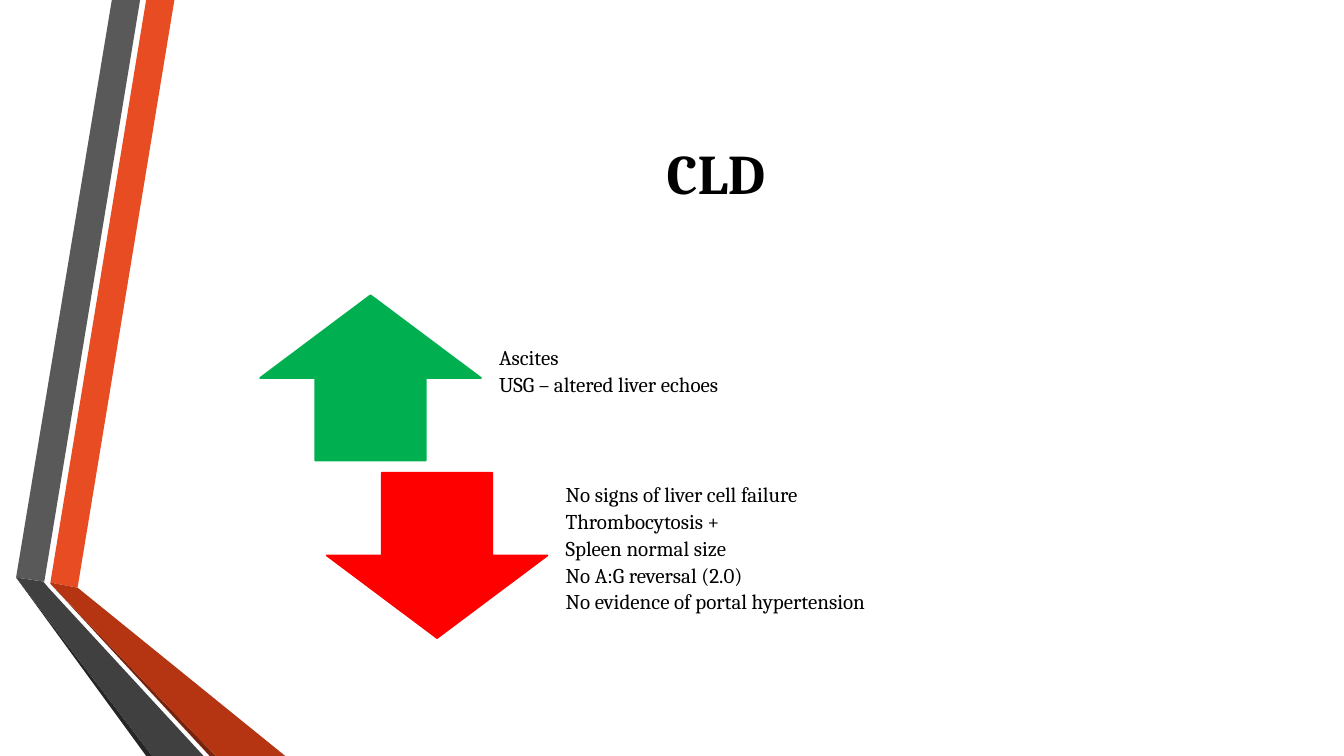
import pptx
import pptx.util
import pptx.dml.color
import pptx.enum.shapes
import pptx.enum.text

Inches = pptx.util.Inches
Pt = pptx.util.Pt
RGBColor = pptx.dml.color.RGBColor
ARROW = pptx.enum.shapes.MSO_SHAPE
ALIGN = pptx.enum.text.PP_ALIGN

BLACK = RGBColor(0x00, 0x00, 0x00)
GREEN = RGBColor(0x00, 0xB0, 0x50)
RED = RGBColor(0xFF, 0x00, 0x00)
ORANGE = RGBColor(0xE8, 0x4C, 0x22)
RUST = RGBColor(0xB5, 0x35, 0x13)
DARK_RUST = RGBColor(0x78, 0x23, 0x0D)
GREY = RGBColor(0x59, 0x59, 0x59)
DARK_GREY = RGBColor(0x40, 0x40, 0x40)
CHARCOAL = RGBColor(0x26, 0x26, 0x26)

FONT = "Cambria"
ARROW_WIDTH, ARROW_HEIGHT = 2.19, 1.64
NOTES_OFFSET, NOTES_WIDTH = 2.25, 6.14

# Folded ribbon on the left edge: colour and corner points in inches
RIBBON = [
    (ORANGE, [(0.5, 5.78), (0.77, 5.83), (1.73, 0), (1.45, 0)]),
    (GREY, [(1.39, 0), (1.11, 0), (0.16, 5.73), (0.44, 5.77)]),
    (CHARCOAL, [(0.16, 5.73), (1.45, 7.5), (1.51, 7.5)]),
    (DARK_RUST, [(0.5, 5.79), (2.08, 7.5), (2.14, 7.5)]),
    (RUST, [(0.5, 5.79), (2.14, 7.5), (2.83, 7.5), (0.77, 5.83), (0.5, 5.78)]),
    (DARK_GREY, [(2.02, 7.5), (0.48, 5.83), (0.43, 5.77), (0.16, 5.73),
                 (1.51, 7.5)]),
]

# Arrow shape, colour, left, top and findings beside it
EVIDENCE = [
    (ARROW.UP_ARROW, GREEN, 2.58, 2.93,
     ["Ascites", "USG – altered liver echoes"]),
    (ARROW.DOWN_ARROW, RED, 3.24, 4.69,
     ["No signs of liver cell failure", "Thrombocytosis +",
      "Spleen normal size", "No A:G reversal (2.0)",
      "No evidence of portal hypertension"]),
]


def add_ribbon_face(slide, color, corners):
    points = [(Inches(x), Inches(y)) for x, y in corners]
    builder = slide.shapes.build_freeform(*points[0])
    builder.add_line_segments(points[1:], close=True)
    face = builder.convert_to_shape()
    face.shadow.inherit = False
    face.fill.solid()
    face.fill.fore_color.rgb = color
    face.line.fill.background()


def add_arrow(slide, kind, color, left, top):
    arrow = slide.shapes.add_shape(kind, Inches(left), Inches(top),
                                   Inches(ARROW_WIDTH), Inches(ARROW_HEIGHT))
    arrow.shadow.inherit = False
    arrow.fill.solid()
    arrow.fill.fore_color.rgb = color
    arrow.line.color.rgb = color
    arrow.line.width = Pt(1.25)


def add_text(slide, left, top, width, height, lines, size, bold=False,
             align=ALIGN.LEFT):
    box = slide.shapes.add_textbox(Inches(left), Inches(top),
                                   Inches(width), Inches(height))
    frame = box.text_frame
    frame.word_wrap = True
    frame.vertical_anchor = pptx.enum.text.MSO_ANCHOR.MIDDLE
    frame.text = "\n".join(lines)
    for paragraph in frame.paragraphs:
        paragraph.alignment = align
        paragraph.font.name = FONT
        paragraph.font.size = Pt(size)
        paragraph.font.bold = bold
        paragraph.font.color.rgb = BLACK
    return frame


def add_findings(slide, left, top, findings):
    frame = add_text(slide, left, top, NOTES_WIDTH, ARROW_HEIGHT, findings, 15)
    frame.margin_left = frame.margin_right = frame.margin_bottom = Inches(0.12)
    frame.margin_top = 0
    for paragraph in frame.paragraphs:
        paragraph.line_spacing = 0.9
        paragraph.space_after = Pt(3)


def main():
    presentation = pptx.Presentation()
    presentation.slide_width = Inches(13.33)
    presentation.slide_height = Inches(7.5)
    slide = presentation.slides.add_slide(presentation.slide_layouts[6])

    # Ribbon
    for color, corners in RIBBON:
        add_ribbon_face(slide, color, corners)

    # Title
    add_text(slide, 1.62, 0.75, 10.96, 1.92, ["CLD"], 40, True, ALIGN.CENTER)

    # Findings for and against
    for kind, color, left, top, findings in EVIDENCE:
        add_arrow(slide, kind, color, left, top)
        add_findings(slide, left + NOTES_OFFSET, top, findings)

    presentation.save("out.pptx")


if __name__ == "__main__":
    main()
